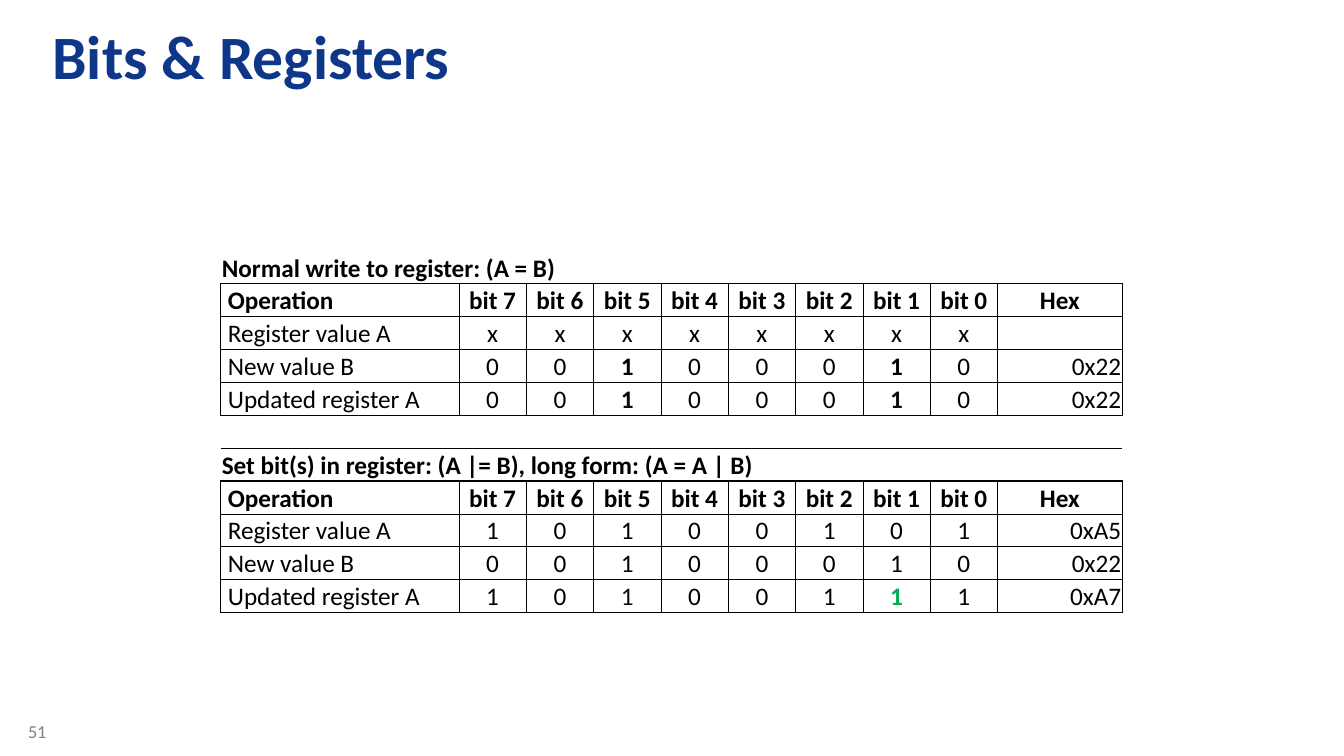
import pptx
import pptx.dml.color
import pptx.enum.text
import pptx.oxml
import pptx.oxml.ns
import pptx.util

RGBColor = pptx.dml.color.RGBColor
Inches = pptx.util.Inches
Pt = pptx.util.Pt
PP_ALIGN = pptx.enum.text.PP_ALIGN
MSO_ANCHOR = pptx.enum.text.MSO_ANCHOR

NAVY = RGBColor(0x0E, 0x36, 0x89)
GREY = RGBColor(0x80, 0x80, 0x80)
BLACK = RGBColor(0, 0, 0)
INK = RGBColor(0x0A, 0x0B, 0x0F)
GREEN = RGBColor(0x00, 0xB0, 0x50)

FONT = "Calibri"
NO_STYLE = "{2D5ABB26-0587-4C30-8999-92F81FD0307C}"
HEADER = ["Operation"] + [f"bit {bit}" for bit in range(7, -1, -1)] + ["Hex"]
OPERATIONS = ["Register value A", "New value B", "Updated register A"]
COLUMN_WIDTHS = [2.37] + [0.67] * 8 + [1.24]
HEX_COLUMN = len(HEADER) - 1
BIT_5, BIT_1 = HEADER.index("bit 5"), HEADER.index("bit 1")

# Each block: heading, (bits, hex) per operation, {(operation, column): (bold, colour)}
BLOCKS = [
    ("Normal write to register: (A = B)",
     [("xxxxxxxx", ""), ("00100010", "0x22"), ("00100010", "0x22")],
     {(1, BIT_5): (True, BLACK), (1, BIT_1): (True, BLACK),
      (2, BIT_5): (True, INK), (2, BIT_1): (True, INK)}),
    ("Set bit(s) in register: (A |= B), long form: (A = A | B)",
     [("10100101", "0xA5"), ("00100010", "0x22"), ("10100111", "0xA7")],
     {(2, BIT_5): (False, INK), (2, BIT_1): (True, GREEN)}),
]
BLOCK_ROWS = 2 + len(OPERATIONS)
ROW_COUNT = len(BLOCKS) * BLOCK_ROWS + len(BLOCKS) - 1


def style_font(font, size, color, bold=False):
    font.name = FONT
    font.size = Pt(size)
    font.bold = bold
    font.color.rgb = color


def add_title(slide, left, top, width, height):
    title = slide.shapes.title
    title.left, title.top, title.width, title.height = left, top, width, height
    frame = title.text_frame
    frame.text = "Bits & Registers"
    frame.vertical_anchor = MSO_ANCHOR.TOP
    frame.margin_left = frame.margin_right = Inches(0.13)
    frame.margin_top = frame.margin_bottom = Inches(0.07)
    frame.paragraphs[0].alignment = PP_ALIGN.LEFT
    style_font(frame.paragraphs[0].font, 44, NAVY, bold=True)


def add_slide_number(slide, left, top, width, height):
    frame = slide.shapes.add_textbox(left, top, width, height).text_frame
    frame.word_wrap = True
    frame.text = "51"
    style_font(frame.paragraphs[0].font, 13, GREY)


def set_borders(cell, **widths):
    """Draw black borders; widths in points are keyed by side: L, R, T, B."""
    properties = cell._tc.get_or_add_tcPr()
    for side, width in widths.items():
        properties.append(pptx.oxml.parse_xml(
            f'<a:ln{side} {pptx.oxml.ns.nsdecls("a")} w="{Pt(width)}">'
            f'<a:solidFill><a:srgbClr val="{BLACK}"/></a:solidFill></a:ln{side}>'))


def fill_cell(cell, text="", alignment=PP_ALIGN.LEFT, bold=False, color=BLACK, indent=0.01):
    cell.fill.background()
    cell.vertical_anchor = MSO_ANCHOR.BOTTOM
    cell.margin_left = Inches(indent)
    cell.margin_right = cell.margin_top = Inches(0.01)
    cell.margin_bottom = 0
    cell.text = text
    paragraph = cell.text_frame.paragraphs[0]
    paragraph.alignment = alignment
    style_font(paragraph.font, 18, color, bold)


def fill_block(table, first_row, heading, values, emphasis):
    """Write a heading, a header row and one row per operation."""
    heading_cell = table.cell(first_row, 0)
    heading_cell.merge(table.cell(first_row, HEX_COLUMN))
    for column in range(len(HEADER)):
        set_borders(table.cell(first_row, column), B=1)
    fill_cell(heading_cell, heading, bold=True)

    rows = [HEADER] + [[operation, *bits, hex_value]
                       for operation, (bits, hex_value) in zip(OPERATIONS, values)]
    for index, texts in enumerate(rows):
        is_header = index == 0
        for column, text in enumerate(texts):
            cell = table.cell(first_row + 1 + index, column)
            set_borders(cell,
                        L=1 if column == 0 else 0.5,
                        R=1 if column == HEX_COLUMN else 0.5,
                        T=1 if is_header else 0.5,
                        B=1 if index == len(rows) - 1 else 0.5)
            if column == 0:
                alignment, indent = PP_ALIGN.LEFT, 0.07
            elif column == HEX_COLUMN and not is_header:
                alignment, indent = PP_ALIGN.RIGHT, 0.01
            else:
                alignment, indent = PP_ALIGN.CENTER, 0.01
            bold, color = emphasis.get((index - 1, column), (is_header, BLACK))
            fill_cell(cell, text, alignment, bold, color, indent)


def add_register_table(slide, left, top, width, height):
    frame = slide.shapes.add_table(ROW_COUNT, len(HEADER), left, top, width, height)
    table = frame.table
    table.first_row = table.horz_banding = False
    table._tbl.tblPr.find(pptx.oxml.ns.qn("a:tableStyleId")).text = NO_STYLE
    for column, share in zip(table.columns, COLUMN_WIDTHS):
        column.width = int(width * share / sum(COLUMN_WIDTHS))
    for row in table.rows:
        row.height = int(height / ROW_COUNT)

    for number, (heading, values, emphasis) in enumerate(BLOCKS):
        first_row = number * (BLOCK_ROWS + 1)
        if number:
            for cell in table.rows[first_row - 1].cells:
                set_borders(cell, T=1)
                fill_cell(cell)
        fill_block(table, first_row, heading, values, emphasis)


def main():
    presentation = pptx.Presentation()
    presentation.slide_width = Inches(13.33)
    presentation.slide_height = Inches(7.5)
    slide = presentation.slides.add_slide(presentation.slide_layouts.get_by_name("Title Only"))
    add_slide_number(slide, Inches(0.18), Inches(7.1), Inches(0.59), Inches(0.4))
    add_title(slide, Inches(0.39), Inches(0.11), Inches(12.47), Inches(1.03))
    add_register_table(slide, Inches(2.19), Inches(2.49), Inches(8.94), Inches(3.59))
    presentation.save("out.pptx")


if __name__ == "__main__":
    main()
